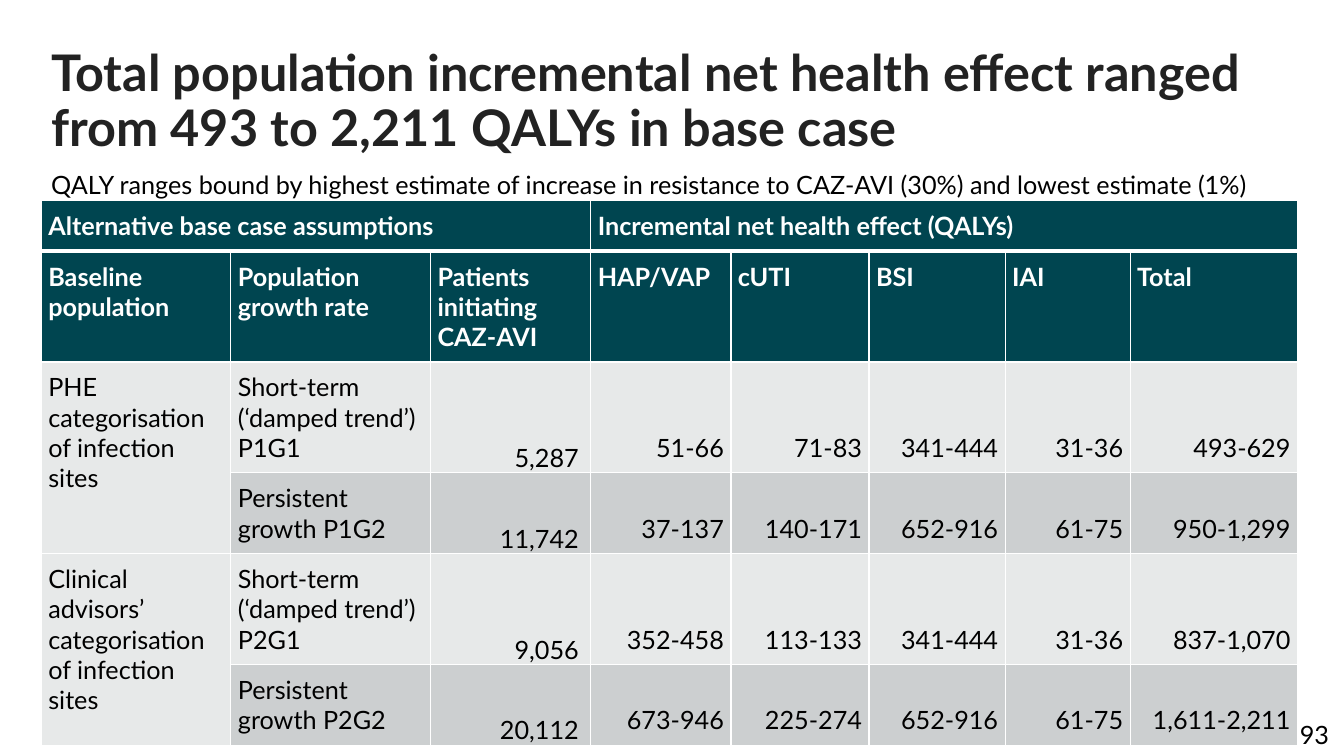
from lxml import etree
from pptx import Presentation
from pptx.dml.color import RGBColor
from pptx.enum.text import MSO_ANCHOR, PP_ALIGN
from pptx.oxml.ns import qn
from pptx.util import Inches, Pt

LEFT, RIGHT = PP_ALIGN.LEFT, PP_ALIGN.RIGHT
TOP, BOTTOM = MSO_ANCHOR.TOP, MSO_ANCHOR.BOTTOM

FONT = "Lato"
COLORS = {"title": "222222", "text": "000000", "header": "004550",
          "light": "E7E9E9", "dark": "CCCFD0", "white": "FFFFFF"}

TITLE = "Total population incremental net health effect ranged from 493 to 2,211 QALYs in base case"
SUBTITLE = ("QALY ranges bound by highest estimate of increase in resistance to "
            "CAZ-AVI (30%) and lowest estimate (1%)")
PAGE_NUMBER = "93"

ROWS = [
    ["Alternative base case assumptions", "", "",
     "Incremental net health effect (QALYs)", "", "", "", ""],
    ["Baseline population", "Population growth rate", "Patients initiating CAZ-AVI",
     "HAP/VAP", "cUTI", "BSI", "IAI", "Total"],
    ["PHE categorisation of infection sites", "Short-term (‘damped trend’) P1G1",
     "5,287", "51-66", "71-83", "341-444", "31-36", "493-629"],
    ["", "Persistent growth P1G2",
     "11,742", "37-137", "140-171", "652-916", "61-75", "950-1,299"],
    ["Clinical advisors’ categorisation of infection sites",
     "Short-term (‘damped trend’) P2G1",
     "9,056", "352-458", "113-133", "341-444", "31-36", "837-1,070"],
    ["", "Persistent growth P2G2",
     "20,112", "673-946", "225-274", "652-916", "61-75", "1,611-2,211"],
]
MERGES = [((0, 0), (0, 2)), ((0, 3), (0, 7)), ((2, 0), (3, 0)), ((4, 0), (5, 0))]
COLUMN_WIDTHS = [1.88, 1.98, 1.59, 1.39, 1.37, 1.35, 1.24, 1.66]
ROW_HEIGHTS = [0.44, 0.89, 0.89, 0.65, 0.89, 0.65]
HEADER_ROWS = 2
PATIENTS_COLUMN = 2


def write(frame, text, color, size=18, bold=False, align=LEFT):
    para = frame.paragraphs[0]
    para.text = text
    para.alignment = align
    font = para.font
    font.name, font.size, font.bold = FONT, Pt(size), bold
    font.color.rgb = RGBColor.from_string(COLORS[color])
    return para


def add_text(page, place, text, color, **style):
    box = page.shapes.add_textbox(*[Inches(length) for length in place])
    box.text_frame.word_wrap = True
    return write(box.text_frame, text, color, **style)


def set_borders(cell, row):
    properties = cell._tc.get_or_add_tcPr()
    for side in ("lnL", "lnR", "lnT", "lnB"):
        below_heading = (row, side) in ((0, "lnB"), (1, "lnT"))
        line = etree.SubElement(properties, qn(f"a:{side}"), w=str(Pt(3 if below_heading else 1)))
        fill = etree.SubElement(line, qn("a:solidFill"))
        etree.SubElement(fill, qn("a:srgbClr"), val=COLORS["white"])


def format_cell(cell, row, column, text):
    is_header = row < HEADER_ROWS
    is_number = not is_header and column >= PATIENTS_COLUMN
    is_patients = is_number and column == PATIENTS_COLUMN
    is_light = row % 2 == 0 or column == 0
    fill = "header" if is_header else "light" if is_light else "dark"
    set_borders(cell, row)
    cell.fill.solid()
    cell.fill.fore_color.rgb = RGBColor.from_string(COLORS[fill])
    cell.margin_left = Inches(0.07)
    cell.margin_right = Inches(0.12 if is_patients else 0.07)
    cell.margin_top = cell.margin_bottom = Inches(0 if is_patients else 0.1)
    cell.vertical_anchor = BOTTOM if is_number else TOP
    para = write(cell.text_frame, text, "white" if is_header else "text",
                 bold=is_header, align=RIGHT if is_number else LEFT)
    if is_patients:
        para.line_spacing = 1.07
        para.space_after = Pt(8)


def add_results_table(page):
    frame = page.shapes.add_table(len(ROWS), len(COLUMN_WIDTHS), Inches(0.41),
                                  Inches(1.99), Inches(12.46), Inches(5.4))
    table = frame.table
    table.horz_banding = False
    for column, width in zip(table.columns, COLUMN_WIDTHS):
        column.width = Inches(width)
    for row, height in zip(table.rows, ROW_HEIGHTS):
        row.height = Inches(height)
    for row, texts in enumerate(ROWS):
        for column, text in enumerate(texts):
            format_cell(table.cell(row, column), row, column, text)
    for first, last in MERGES:
        table.cell(*first).merge(table.cell(*last))


def main():
    deck = Presentation()
    deck.slide_width, deck.slide_height = Inches(13.33), Inches(7.5)
    page = deck.slides.add_slide(deck.slide_layouts[6])
    add_text(page, (11.44, 7.09, 1.84, 0.4), PAGE_NUMBER, "text", align=RIGHT)
    title = add_text(page, (0.41, 0.43, 12.12, 1.4), TITLE, "title", size=36, bold=True)
    title.line_spacing = 0.9
    add_results_table(page)
    subtitle = add_text(page, (0.41, 1.48, 12.46, 0.89), SUBTITLE, "text")
    subtitle.line_spacing = 1.5
    subtitle.space_before = Pt(2)
    deck.save("out.pptx")


if __name__ == "__main__":
    main()
